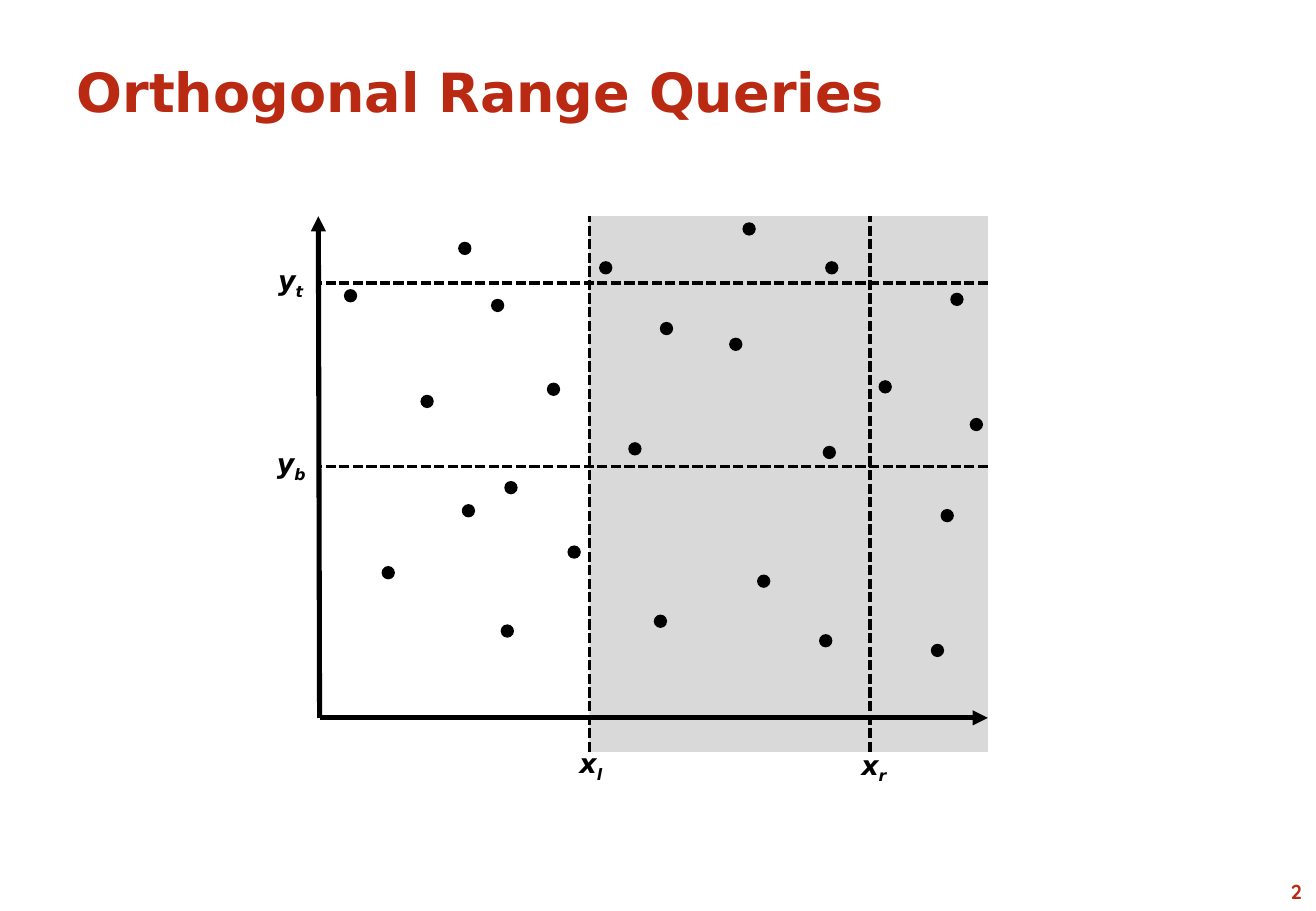
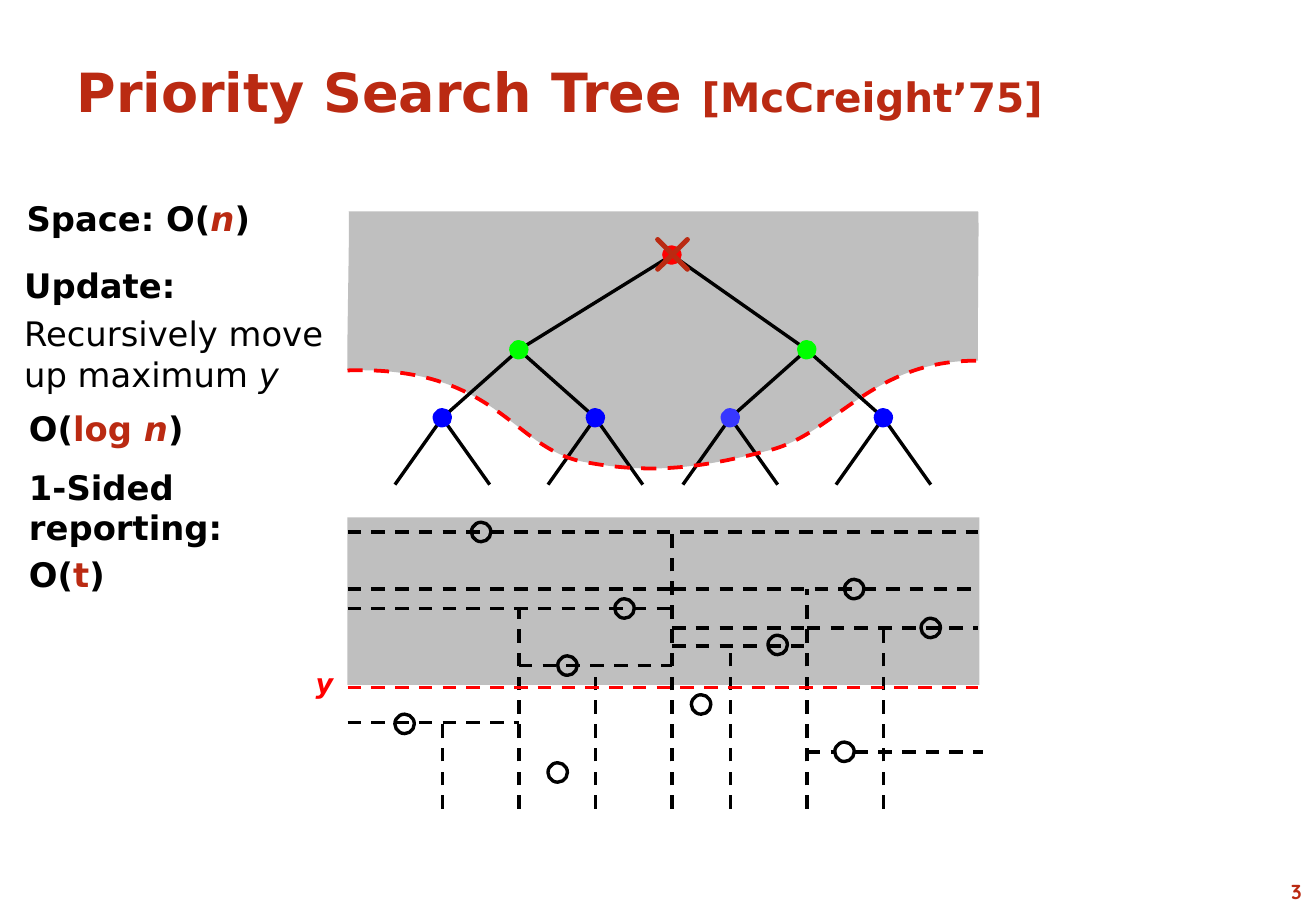
from dataclasses import dataclass
from typing import NamedTuple, Optional

from lxml.etree import SubElement
from pptx import Presentation
from pptx.dml.color import RGBColor
from pptx.enum.dml import MSO_LINE
from pptx.enum.shapes import MSO_CONNECTOR, MSO_SHAPE
from pptx.enum.text import MSO_ANCHOR, MSO_AUTO_SIZE, PP_ALIGN
from pptx.oxml.ns import qn
from pptx.util import Emu, Pt

PX_PER_INCH = 100
BODY_FONT = "DejaVu Sans"
NUMBER_FONT = "Quicksand"
BLACK, WHITE, ACCENT = "000000", "FFFFFF", "BA2A12"
RED, GREEN, BLUE, PALE_BLUE = "FF0000", "00FF00", "0000FF", "3737FF"
RANGE_GREY, SEARCH_GREY = "D9D9D9", "BFBFBF"


class Point(NamedTuple):
    x: int
    y: int


class Box(NamedTuple):
    left: int
    top: int
    width: int
    height: int


class Span(NamedTuple):
    text: str
    colour: Optional[str] = None
    italic: Optional[bool] = None
    subscript: bool = False
    size: Optional[int] = None


@dataclass(frozen=True)
class Stroke:
    colour: str = BLACK
    width: float = 2
    dash: Optional[MSO_LINE] = None
    arrow: bool = False


@dataclass(frozen=True)
class Label:
    box: Box
    paragraphs: list[list[Span]]
    size: int = 20
    colour: str = BLACK
    bold: bool = True
    italic: bool = False
    wrap: bool = False


@dataclass(frozen=True)
class TreeNode:
    at: Point
    colour: str
    parent: Optional[Point] = None


AXIS = Stroke(width=3, arrow=True)
QUERY = Stroke(dash=MSO_LINE.SQUARE_DOT)
SPLIT = Stroke(dash=MSO_LINE.DASH)
THRESHOLD = Stroke(RED, 2, MSO_LINE.DASH)
FRONTIER = Stroke(RED, 2.25, MSO_LINE.DASH)


def px(length: int) -> Emu:
    return Emu(length * 914400 // PX_PER_INCH)


def rgb(colour: str) -> RGBColor:
    return RGBColor.from_string(colour)


def apply_stroke(line, stroke: Stroke) -> None:
    line.fill.solid()
    line.fill.fore_color.rgb = rgb(stroke.colour)
    line.width = Pt(stroke.width)
    if stroke.dash is not None:
        line.dash_style = stroke.dash


def paint(shape, fill: Optional[str], stroke: Optional[Stroke]) -> None:
    shape.shadow.inherit = False
    if fill:
        shape.fill.solid()
        shape.fill.fore_color.rgb = rgb(fill)
    else:
        shape.fill.background()
    if stroke:
        apply_stroke(shape.line, stroke)
    else:
        shape.line.fill.background()


def draw_shape(slide, kind: MSO_SHAPE, box: Box, fill: Optional[str] = None,
               stroke: Optional[Stroke] = None):
    shape = slide.shapes.add_shape(kind, *map(px, box))
    paint(shape, fill, stroke)
    return shape


def draw_line(slide, start: Point, end: Point, stroke: Stroke) -> None:
    connector = slide.shapes.add_connector(MSO_CONNECTOR.STRAIGHT, *map(px, (*start, *end)))
    apply_stroke(connector.line, stroke)
    if stroke.arrow:
        SubElement(connector.line._get_or_add_ln(), qn("a:tailEnd"), type="triangle")
    SubElement(connector._element.spPr, qn("a:effectLst"))


def draw_curve(slide, knots: list[tuple[int, int]], fill: Optional[str] = None,
               stroke: Optional[Stroke] = None) -> None:
    corners = [(px(x), px(y)) for x, y in knots]
    builder = slide.shapes.build_freeform(*corners[0], scale=1.0)
    builder.add_line_segments(corners[1:], close=False)
    shape = builder.convert_to_shape()
    segments = list(shape._element.iter(qn("a:lnTo")))
    outline = segments[0].getparent()
    for first in range(0, len(segments), 3):
        bezier = SubElement(outline, qn("a:cubicBezTo"))
        for segment in segments[first:first + 3]:
            bezier.append(segment[0])
            outline.remove(segment)
    paint(shape, fill, stroke)


def set_font(font, size: int, colour: str, bold: bool = True, italic: bool = False,
             name: str = BODY_FONT) -> None:
    font.name, font.size, font.bold, font.italic = name, Pt(size), bold, italic
    font.color.rgb = rgb(colour)


def write_spans(paragraph, spans: list[Span]) -> None:
    for span in spans:
        for index, text in enumerate(span.text.split("\n")):
            if index:
                paragraph.add_line_break()
            run = paragraph.add_run()
            run.text = text
            if span.colour:
                run.font.color.rgb = rgb(span.colour)
            if span.italic is not None:
                run.font.italic = span.italic
            if span.size:
                run.font.size = Pt(span.size)
            if span.subscript:
                run._r.get_or_add_rPr().set("baseline", "-25000")


def draw_label(slide, label: Label) -> None:
    frame = slide.shapes.add_textbox(*map(px, label.box)).text_frame
    frame.word_wrap = label.wrap
    frame.auto_size = MSO_AUTO_SIZE.SHAPE_TO_FIT_TEXT
    for index, spans in enumerate(label.paragraphs):
        paragraph = frame.add_paragraph() if index else frame.paragraphs[0]
        paragraph.space_before = Pt(label.size * 0.2)
        set_font(paragraph.font, label.size, label.colour, label.bold, label.italic)
        write_spans(paragraph, spans)


def add_titled_slide(prs, title: list[Span], number: int):
    slide = prs.slides.add_slide(prs.slide_layouts[5])
    heading = slide.shapes.title
    heading.left, heading.top, heading.width, heading.height = map(px, Box(53, 36, 975, 77))
    heading.text_frame.vertical_anchor = MSO_ANCHOR.MIDDLE
    paragraph = heading.text_frame.paragraphs[0]
    paragraph.alignment = PP_ALIGN.LEFT
    set_font(paragraph.font, 32, ACCENT)
    write_spans(paragraph, title)

    footer = slide.shapes.add_textbox(*map(px, Box(983, 719, 98, 30))).text_frame
    footer.word_wrap = True
    footer.paragraphs[0].alignment = PP_ALIGN.RIGHT
    set_font(footer.paragraphs[0].font, 12, ACCENT, name=NUMBER_FONT)
    write_spans(footer.paragraphs[0], [Span(str(number))])
    return slide


def build_range_queries(prs) -> None:
    slide = add_titled_slide(prs, [Span("Orthogonal Range Queries")], 2)
    top, bottom, left, right = 178, 619, 262, 813
    query_ranges = [Box(485, top, 228, 205), Box(485, top, 328, 205),
                    Box(485, top, 328, bottom - top), Box(488, 235, 226, 148)]
    for query_range in query_ranges:
        draw_shape(slide, MSO_SHAPE.RECTANGLE, query_range, RANGE_GREY)

    data_points = [
        (377, 199), (283, 238), (404, 246), (380, 415), (314, 466), (412, 514), (346, 325),
        (450, 315), (415, 396), (538, 506), (467, 449), (623, 473), (766, 530), (679, 215),
        (493, 215), (600, 278), (674, 522), (723, 313), (677, 367), (782, 241), (774, 419),
        (798, 344), (517, 364), (611, 183), (543, 265)]
    for x, y in data_points:
        draw_shape(slide, MSO_SHAPE.OVAL, Box(x, y, 11, 11), BLACK)

    origin = Point(263, 591)
    for tip in (Point(left, top), Point(right, origin.y)):
        draw_line(slide, origin, tip, AXIS)
    for x in (485, 716):
        draw_line(slide, Point(x, bottom), Point(x, top), QUERY)
    for y in (384, 233):
        draw_line(slide, Point(right, y), Point(left, y), QUERY)

    bounds = [("x", "l", Box(467, 610, 40, 37)), ("y", "b", Box(218, 363, 45, 37)),
              ("x", "r", Box(699, 611, 43, 37)), ("y", "t", Box(219, 212, 42, 37))]
    for axis, side, box in bounds:
        draw_label(slide, Label(box, [[Span(axis), Span(side, subscript=True)]],
                                size=16, italic=True))


def draw_search_tree(slide) -> None:
    root, left, right = Point(553, 210), Point(427, 288), Point(664, 288)
    lowest = [TreeNode(Point(x, 344), colour, parent) for x, colour, parent in (
        (364, BLUE, left), (490, BLUE, left), (601, PALE_BLUE, right), (727, BLUE, right))]
    nodes = [TreeNode(root, RED), TreeNode(left, GREEN, root), TreeNode(right, GREEN, root),
             *lowest]
    for node in lowest:
        for offset in (-39, 39):
            draw_line(slide, Point(node.at.x + offset, 399), node.at, Stroke())
    for node in nodes:
        if node.parent:
            draw_line(slide, node.at, node.parent, Stroke())
    for node in nodes:
        draw_shape(slide, MSO_SHAPE.OVAL, Box(node.at.x - 8, node.at.y - 8, 16, 16), node.colour)
    cross = draw_shape(slide, MSO_SHAPE.MATH_MULTIPLY, Box(530, 186, 47, 47),
                       stroke=Stroke(ACCENT, 3))
    cross.adjustments[0] = 0


def build_priority_search_tree(prs) -> None:
    slide = add_titled_slide(
        prs, [Span("Priority Search Tree "), Span("[McCreight’75]", size=24)], 3)
    left, right, bottom = 286, 805, 666
    frontier = [(286, 305), (408, 301), (421, 368), (479, 380), (536, 391), (578, 385),
                (632, 371), (687, 358), (717, 296), (805, 297)]
    draw_curve(slide, [(287, 174), (288, 174), (285, 305), *frontier,
                       (804, 299), (806, 173), (805, 174)], fill=SEARCH_GREY)
    draw_shape(slide, MSO_SHAPE.RECTANGLE, Box(left, 426, 520, 138), SEARCH_GREY)

    horizontal_splits = [
        (664, 809, 619), (left, 427, 595), (427, 553, 548), (553, 664, 532), (664, right, 517),
        (553, 664, 517), (left, 553, 501), (left, 552, 485), (553, right, 485),
        (left, right, 438)]
    for start, end, y in horizontal_splits:
        draw_line(slide, Point(start, y), Point(end, y), SPLIT)
    vertical_splits = [(364, 595), (427, 501), (490, 548), (553, 438), (553, 485), (601, 532),
                       (664, 485), (664, 517), (727, 517), (727, 619)]
    for x, top in vertical_splits:
        draw_line(slide, Point(x, bottom), Point(x, top), SPLIT)

    stored_points = [(758, 509), (459, 540), (325, 588), (632, 523), (569, 572), (506, 493),
                     (695, 477), (388, 430), (451, 628)]
    for x, y in stored_points:
        draw_shape(slide, MSO_SHAPE.OVAL, Box(x, y, 16, 16), stroke=Stroke())
    draw_shape(slide, MSO_SHAPE.OVAL, Box(687, 611, 16, 16), WHITE, Stroke())

    draw_search_tree(slide)
    draw_line(slide, Point(left, 566), Point(right, 566), THRESHOLD)
    draw_curve(slide, frontier, stroke=FRONTIER)

    labels = [
        Label(Box(12, 158, 211, 44), [[Span("Space: O("), Span("n", ACCENT, True), Span(")")]]),
        Label(Box(10, 213, 145, 44), [[Span("Update:")]]),
        Label(Box(10, 253, 272, 77),
              [[Span("Recursively move up maximum "), Span("y", italic=True)]],
              bold=False, wrap=True),
        Label(Box(14, 331, 153, 44),
              [[Span("O("), Span("log ", ACCENT), Span("n", ACCENT, True), Span(")")]]),
        Label(Box(14, 379, 189, 118),
              [[Span("1-Sided\nreporting:")], [Span("O("), Span("t", ACCENT), Span(")")]]),
        Label(Box(250, 544, 35, 37), [[Span("y")]], size=16, colour=RED, italic=True)]
    for label in labels:
        draw_label(slide, label)


def main() -> None:
    prs = Presentation()
    prs.slide_width, prs.slide_height = px(1083), px(750)
    build_range_queries(prs)
    build_priority_search_tree(prs)
    prs.save("out.pptx")


if __name__ == "__main__":
    main()
